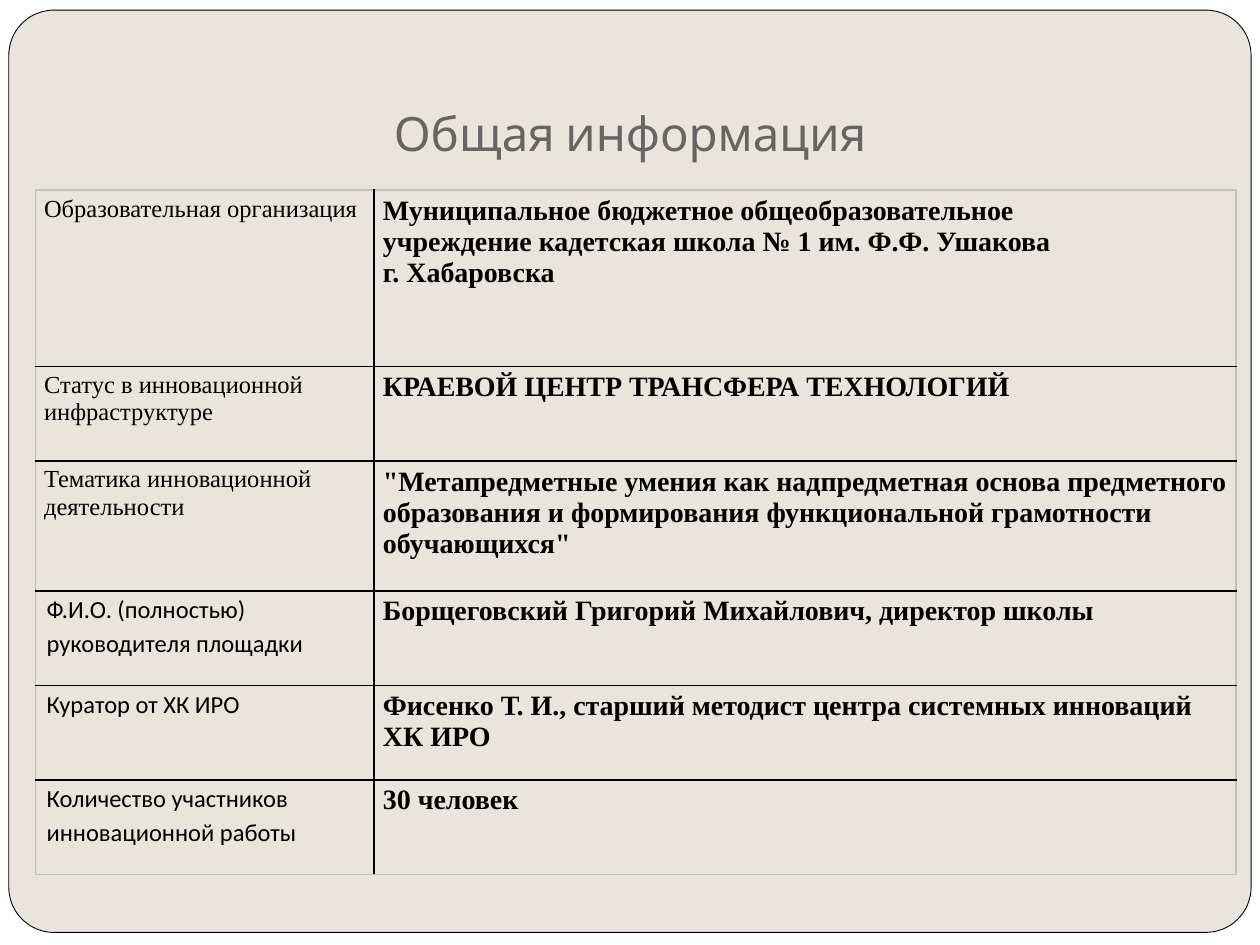
from lxml import etree
from pptx import Presentation, util as u
from pptx.dml.color import RGBColor
from pptx.enum import shapes, text
from pptx.oxml import ns

HUES = {"paper": "E9E5DC", "white": "FFFFFF", "ink": "000000", "title": "696464", "edge": "BFBFBF"}
FONTS = {
    "title": {"name": "Cabin", "size": u.Pt(27), "bold": False},
    "label": {"name": "Times New Roman", "size": u.Pt(14), "bold": False},
    "role": {"name": "Calibri", "size": u.Pt(14), "bold": False},
    "value": {"name": "Times New Roman", "size": u.Pt(16), "bold": True},
}
PARAS = {
    "title": {"alignment": text.PP_ALIGN.CENTER},
    "role": {"line_spacing": 1.15, "space_after": u.Pt(10)},
}
PADS = {"role": (0.09, 0), "label": (0.07, 0.04), "value": (0.07, 0.04)}
SIDES = ("left", "top", "right", "bottom")
COLS = (2.69, 6.84)
ROWS = (
    (1.4, "label", "Образовательная организация",
     "Муниципальное бюджетное общеобразовательное\n"
     "учреждение кадетская школа № 1 им. Ф.Ф. Ушакова\nг. Хабаровска"),
    (0.75, "label", "Статус в инновационной инфраструктуре",
     "КРАЕВОЙ ЦЕНТР ТРАНСФЕРА ТЕХНОЛОГИЙ"),
    (1.03, "label", "Тематика инновационной деятельности",
     '"Метапредметные умения как надпредметная основа предметного образования '
     'и формирования функциональной грамотности обучающихся"'),
    (0.75, "role", "Ф.И.О. (полностью) руководителя площадки",
     "Борщеговский Григорий Михайлович, директор школы"),
    (0.75, "role", "Куратор от ХК ИРО",
     "Фисенко Т. И., старший методист центра системных инноваций ХК ИРО"),
    (0.75, "role", "Количество участников инновационной работы", "30 человек"),
)


def apply(item, vals):
    for key, val in vals.items():
        setattr(item, key, val)


class Deck:
    """Holds the style and the current slide, placing parts by shares of its size."""

    def __init__(self, wide, high):
        self.prs = Presentation()
        apply(self.prs, {"slide_width": u.Inches(wide), "slide_height": u.Inches(high)})
        self.slide = self.prs.slides.add_slide(self.prs.slide_layouts[6])

    def hue(self, name):
        return RGBColor.from_string(HUES[name])

    def box(self, x, y, w, h):
        wide, high = self.prs.slide_width, self.prs.slide_height
        return [round(n) for n in (x * wide, y * high, w * wide, h * high)]

    def back(self, hue):
        fill = self.slide.background.fill
        fill.solid()
        fill.fore_color.rgb = self.hue(hue)

    def panel(self, area, fill, edge, turn):
        kind = shapes.MSO_SHAPE.ROUNDED_RECTANGLE
        shape = self.slide.shapes.add_shape(kind, *self.box(*area))
        shape.shadow.inherit = False
        shape.adjustments[0] = turn
        shape.fill.solid()
        shape.fill.fore_color.rgb = self.hue(fill)
        shape.line.color.rgb = self.hue(edge)
        shape.line.width = u.Pt(0.5)

    def label(self, frame, words, style, hue="ink"):
        frame.text = words
        frame.word_wrap = True
        for para in frame.paragraphs:
            apply(para, PARAS.get(style, {}))
            for run in para.runs:
                apply(run.font, FONTS[style])
                run.font.color.rgb = self.hue(hue)

    def title(self, area, words):
        frame = self.slide.shapes.add_textbox(*self.box(*area)).text_frame
        frame.vertical_anchor = text.MSO_ANCHOR.MIDDLE
        self.label(frame, words, "title", "title")

    def rule(self, cell, side, hue):
        tag = "a:ln" + side[0].upper()
        line = etree.SubElement(cell._tc.get_or_add_tcPr(), ns.qn(tag), w=str(u.Pt(1)))
        fill = etree.SubElement(line, ns.qn("a:solidFill"))
        etree.SubElement(fill, ns.qn("a:srgbClr"), val=HUES[hue])

    def cell(self, cell, words, style, outer):
        self.label(cell.text_frame, words, style)
        side, top = PADS[style]
        pads = (side, top, side, top)
        apply(cell, {f"margin_{k}": u.Inches(v) for k, v in zip(SIDES, pads)})
        for edge in ("left", "right", "top", "bottom"):
            self.rule(cell, edge, "edge" if edge in outer else "ink")
        cell.fill.background()

    def table(self, area, cols, rows):
        grid = self.slide.shapes.add_table(len(rows), len(cols), *self.box(*area)).table
        apply(grid, {"first_row": False, "horz_banding": False})
        for col, wide in zip(grid.columns, cols):
            col.width = u.Inches(wide)
        for r, (high, style, *words) in enumerate(rows):
            grid.rows[r].height = u.Inches(high)
            for c, (part, look) in enumerate(zip(words, (style, "value"))):
                ends = (c == 0, r == 0, c == len(cols) - 1, r == len(rows) - 1)
                outer = [side for side, end in zip(SIDES, ends) if end]
                self.cell(grid.cell(r, c), part, look, outer)


def main():
    deck = Deck(10, 7.5)
    deck.back("white")
    deck.panel((0.007, 0.08 / 7.5, 0.986, 7.32 / 7.5), "paper", "ink", 0.049)
    deck.title((0.069, 0.09, 0.862, 0.1), "Общая информация")
    deck.table((0.028, 1.51 / 7.5, 0.953, 5.43 / 7.5), COLS, ROWS)
    deck.prs.save("out.pptx")


if __name__ == "__main__":
    main()
